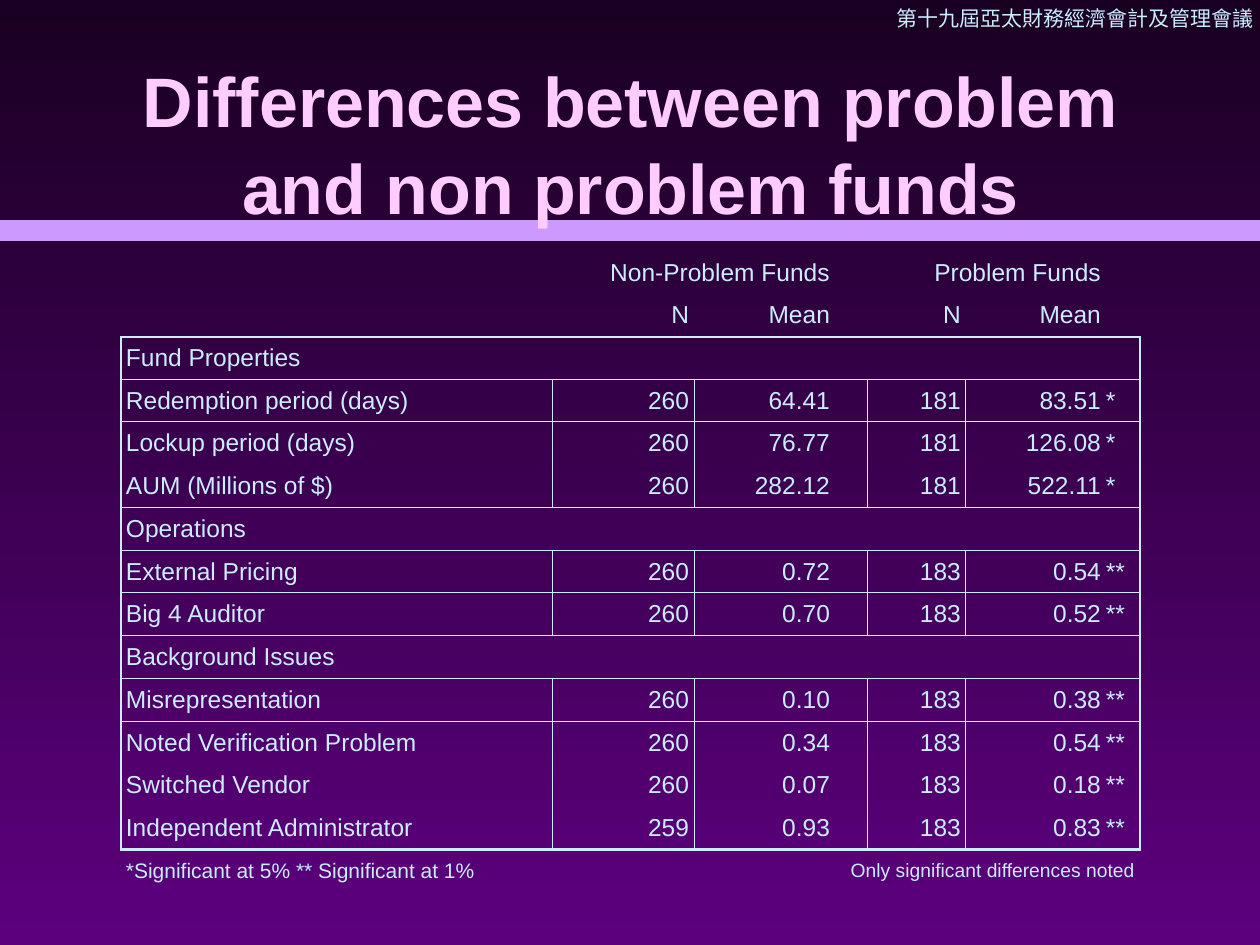
"""Build a slide comparing problem and non-problem funds in a ruled table."""
from dataclasses import dataclass
from typing import Optional

import lxml.etree
import pptx
import pptx.dml.color
import pptx.enum.shapes
import pptx.enum.text
import pptx.oxml.ns
import pptx.util

EMU_PER_PX = 914400 / 126
COLORS = {"top": "190022", "bottom": "5D007E", "band": "CC99FF", "title": "FFCCFF", "text": "CCECFF"}
NO_GRID_STYLE = "{2D5ABB26-0587-4C30-8999-92F81FD0307C}"
LEFT = pptx.enum.text.PP_ALIGN.LEFT
CENTER = pptx.enum.text.PP_ALIGN.CENTER
RIGHT = pptx.enum.text.PP_ALIGN.RIGHT
COLUMN_WIDTHS = [431, 142, 141, 32, 99, 140, 34]
TABLE_LEFT, TABLE_TOP, TABLE_HEIGHT = 121, 252, 641


@dataclass
class Measure:
    name: str
    count: int
    mean: str
    problem_count: int
    problem_mean: str
    stars: str

    def texts(self) -> list[str]:
        return [self.name, str(self.count), self.mean, "", str(self.problem_count), self.problem_mean, self.stars]


@dataclass
class Section:
    name: str
    measures: list[Measure]


SECTIONS = [
    Section("Fund Properties", [
        Measure("Redemption period (days)", 260, "64.41", 181, "83.51", "*"),
        Measure("Lockup period (days)", 260, "76.77", 181, "126.08", "*"),
        Measure("AUM (Millions of $)", 260, "282.12", 181, "522.11", "*"),
    ]),
    Section("Operations", [
        Measure("External Pricing", 260, "0.72", 183, "0.54", "**"),
        Measure("Big 4 Auditor", 260, "0.70", 183, "0.52", "**"),
    ]),
    Section("Background Issues", [
        Measure("Misrepresentation", 260, "0.10", 183, "0.38", "**"),
        Measure("Noted Verification Problem", 260, "0.34", 183, "0.54", "**"),
        Measure("Switched Vendor", 260, "0.07", 183, "0.18", "**"),
        Measure("Independent Administrator", 259, "0.93", 183, "0.83", "**"),
    ]),
]


def px(length: int) -> pptx.util.Emu:
    return pptx.util.Emu(round(length * EMU_PER_PX))


def color(name: str) -> pptx.dml.color.RGBColor:
    return pptx.dml.color.RGBColor.from_string(COLORS[name])


def write(frame, text: str, size: int, name: str = "text", font: str = "Arial", align=LEFT, bold: bool = False) -> None:
    para = frame.paragraphs[0]
    para.alignment = align
    span = para.add_run()
    span.text = text
    span.font.size = pptx.util.Pt(size)
    span.font.name = font
    span.font.bold = bold
    span.font.color.rgb = color(name)


def place(shape, left: int, top: int, width: int, height: int) -> None:
    shape.left, shape.top, shape.width, shape.height = map(px, (left, top, width, height))


def set_margins(target, side: int, end: int) -> None:
    target.margin_left = target.margin_right = px(side)
    target.margin_top = target.margin_bottom = px(end)


def draw_borders(cell, widths: dict[str, Optional[float]]) -> None:
    properties = cell._tc.get_or_add_tcPr()
    qn = pptx.oxml.ns.qn
    drawn = [(side, width) for side, width in widths.items() if width]
    for index, (side, width) in enumerate(drawn):
        line = lxml.etree.Element(qn(f"a:ln{side}"), w=str(pptx.util.Pt(width)))
        fill = lxml.etree.SubElement(line, qn("a:solidFill"))
        lxml.etree.SubElement(fill, qn("a:srgbClr"), val=COLORS["text"])
        properties.insert(index, line)


def draw_background(slide) -> None:
    fill = slide.background.fill
    fill.gradient()
    fill.gradient_angle = 270
    for stop, name in zip(fill.gradient_stops, ("top", "bottom")):
        stop.color.rgb = color(name)


def draw_band(slide) -> None:
    band = slide.shapes.add_shape(pptx.enum.shapes.MSO_SHAPE.RECTANGLE, 0, 0, 0, 0)
    place(band, 0, 220, 1260, 21)
    band.shadow.inherit = False
    band.fill.solid()
    band.fill.fore_color.rgb = color("band")
    band.line.fill.background()
    slide.shapes._spTree.insert(2, band._element)


def draw_title(slide) -> None:
    title = slide.shapes.title
    place(title, 95, 63, 1071, 157)
    frame = title.text_frame
    frame.word_wrap = True
    frame.auto_size = pptx.enum.text.MSO_AUTO_SIZE.NONE
    frame.vertical_anchor = pptx.enum.text.MSO_ANCHOR.MIDDLE
    set_margins(frame, 13, 6)
    write(frame, "Differences between problem and non problem funds", 40, "title", align=CENTER, bold=True)
    frame.paragraphs[0].line_spacing = 1.04


def draw_conference(slide) -> None:
    box = slide.shapes.add_textbox(0, 0, 0, 0)
    place(box, 884, 0, 376, 38)
    frame = box.text_frame
    frame.word_wrap = False
    set_margins(frame, 13, 6)
    frame.margin_right = 0
    write(frame, "第十九屆亞太財務經濟會計及管理會議", 12, font="Times New Roman")


def draw_table(slide) -> None:
    rows = [["", "Non-Problem Funds", "", "", "Problem Funds", "", ""], ["", "N", "Mean", "", "N", "Mean", ""]]
    section_rows = []
    for section in SECTIONS:
        section_rows.append(len(rows))
        rows.append([section.name] + [""] * 6)
        rows.extend(measure.texts() for measure in section.measures)
    first, last = 2, len(rows)
    rows.append(["*Significant at 5% ** Significant at 1%", "Only significant differences noted"] + [""] * 5)

    frame = slide.shapes.add_table(len(rows), len(COLUMN_WIDTHS), px(TABLE_LEFT), px(TABLE_TOP),
                                   px(sum(COLUMN_WIDTHS)), px(TABLE_HEIGHT))
    table = frame.table
    table.first_row = table.horz_banding = False
    table._tbl.tblPr.find(pptx.oxml.ns.qn("a:tableStyleId")).text = NO_GRID_STYLE
    for column, width in zip(table.columns, COLUMN_WIDTHS):
        column.width = px(width)
    edges = [TABLE_HEIGHT * index // len(rows) for index in range(len(rows) + 1)]
    for row, top, bottom in zip(table.rows, edges, edges[1:]):
        row.height = px(bottom - top)
    for row, start, end in ((0, 1, 2), (0, 4, 5), (last, 1, 6)):
        table.cell(row, start).merge(table.cell(row, end))

    rules = {edge: 0.5 for row in section_rows for edge in (row, row + 1)}
    rules.update({first: 1.5, last: 1.5})
    for row, texts in enumerate(rows):
        dividers = {}
        if first <= row < last:
            dividers = {0: 1, 7: 1}
            if row not in section_rows:
                dividers.update({1: 0.5, 4: 0.5})
        for column, text in enumerate(texts):
            cell = table.cell(row, column)
            cell.fill.background()
            cell.vertical_anchor = pptx.enum.text.MSO_ANCHOR.MIDDLE
            set_margins(cell, 0 if column == 6 else 5, 0)
            if text:
                size = 14 if row < last else 12 - column
                write(cell.text_frame, text, size, align=LEFT if column in (0, 6) else RIGHT)
            draw_borders(cell, {"L": dividers.get(column), "R": dividers.get(column + 1),
                                "T": rules.get(row), "B": rules.get(row + 1)})


def main() -> None:
    deck = pptx.Presentation()
    deck.slide_width, deck.slide_height = px(1260), px(945)
    slide = deck.slides.add_slide(deck.slide_layouts[5])
    draw_background(slide)
    draw_band(slide)
    draw_title(slide)
    draw_conference(slide)
    draw_table(slide)
    deck.save("out.pptx")


if __name__ == "__main__":
    main()
